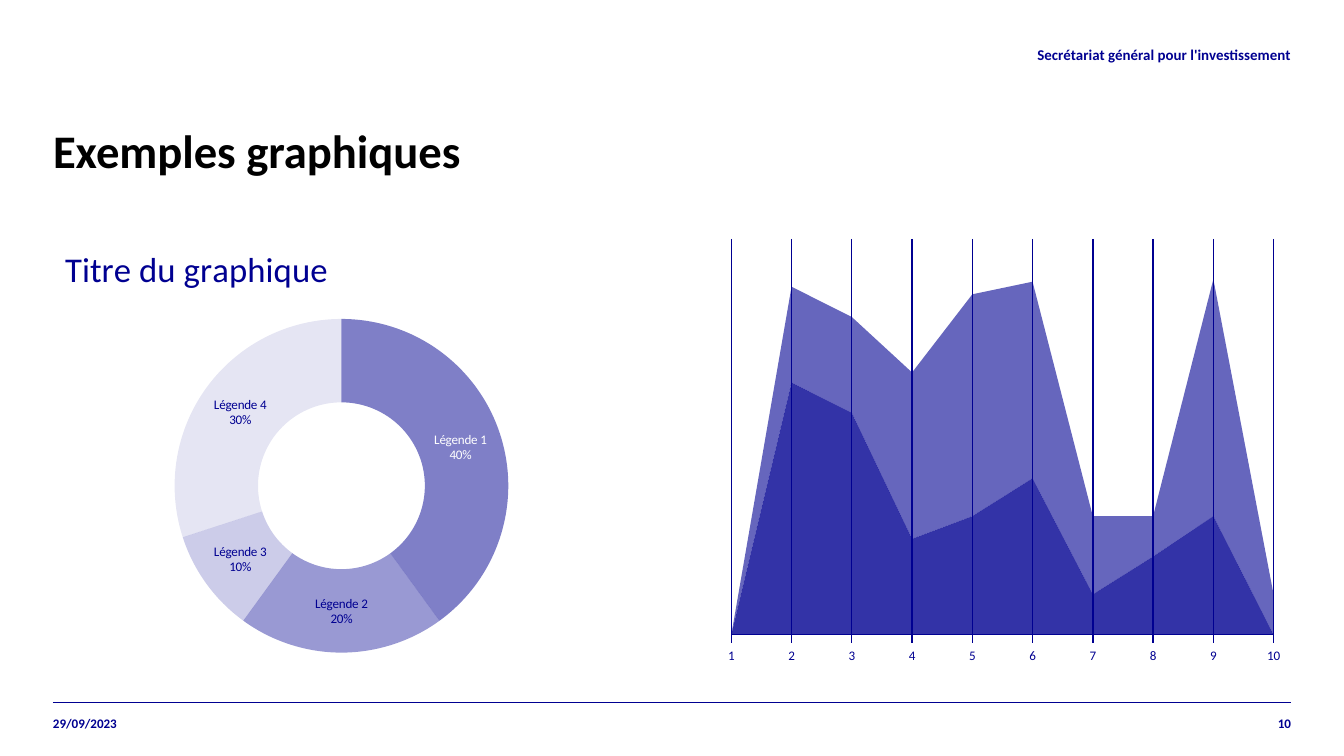
from dataclasses import dataclass

from lxml import etree
from pptx import Presentation
from pptx.chart.data import CategoryChartData
from pptx.dml.color import RGBColor
from pptx.enum.chart import XL_CHART_TYPE, XL_TICK_MARK
from pptx.enum.shapes import MSO_CONNECTOR
from pptx.enum.text import MSO_ANCHOR, PP_ALIGN
from pptx.oxml.ns import qn
from pptx.util import Pt

PX = 914400 / 134.4


@dataclass(frozen=True)
class Theme:
    font: str = "Calibri"
    blue: RGBColor = RGBColor(0x00, 0x00, 0x91)
    black: RGBColor = RGBColor(0, 0, 0)
    white: RGBColor = RGBColor(255, 255, 255)
    title: float = 25
    chart_title: float = 18.6
    header: float = 8
    small: float = 7
    rule: float = 0.5
    axis: float = 0.75


THEME = Theme()


def emu(*lengths):
    return [round(length * PX) for length in lengths]


def style_font(font, size, color, bold=False):
    for name, value in dict(name=THEME.font, size=Pt(size), bold=bold).items():
        setattr(font, name, value)
    font.color.rgb = color


def clear_margins(frame, anchor):
    settings = dict(margin_left=0, margin_right=0, margin_top=0, margin_bottom=0,
                    word_wrap=True, vertical_anchor=anchor)
    for name, value in settings.items():
        setattr(frame, name, value)


def fill_blue(area_format, opacity):
    """Fill with the theme blue at the given opacity in percent, without outline."""
    area_format.fill.solid()
    area_format.fill.fore_color.rgb = THEME.blue
    color = area_format.fill._xPr.find(".//" + qn("a:srgbClr"))
    etree.SubElement(color, qn("a:alpha"), val=str(opacity * 1000))
    area_format.line.fill.background()


def set_layout(parent, position, **fractions):
    """Place a chart part by fractions of the chart box."""
    for existing in parent.findall(qn("c:layout")):
        parent.remove(existing)
    layout = etree.Element(qn("c:layout"))
    manual = etree.SubElement(layout, qn("c:manualLayout"))
    if "w" in fractions:
        etree.SubElement(manual, qn("c:layoutTarget"), val="inner")
    for side in "xy":
        etree.SubElement(manual, qn(f"c:{side}Mode"), val="edge")
    for name, value in fractions.items():
        etree.SubElement(manual, qn(f"c:{name}"), val=str(value))
    parent.insert(position, layout)


def show_name_and_percent(labels):
    """Show category name above percentage in a label or label group element."""
    for flag, shown in dict(showVal=0, showCatName=1, showPercent=1).items():
        labels.find(qn(f"c:{flag}")).set("val", str(shown))
    separator = etree.Element(qn("c:separator"))
    separator.text = "\n"
    labels.find(qn("c:showBubbleSize")).addnext(separator)


def add_chart(slide, box, kind, categories, series):
    data = CategoryChartData()
    data.categories = categories
    for name, values in series.items():
        data.add_series(name, values)
    chart = slide.shapes.add_chart(kind, *emu(*box), data).chart
    chart.has_legend = False
    style_font(chart.font, THEME.small, THEME.blue)
    return chart


def add_doughnut(slide, box):
    chart = add_chart(slide, box, XL_CHART_TYPE.DOUGHNUT,
                      [f"Légende {n}" for n in range(1, 5)],
                      {"Series 1": (40, 20, 10, 30)})
    chart.has_title = True
    heading = chart.chart_title.text_frame.paragraphs[0].add_run()
    heading.text = "Titre du graphique"
    style_font(heading.font, THEME.chart_title, THEME.blue)
    set_layout(chart.element.find(".//" + qn("c:title")), 1, x=0.01, y=0.02)
    set_layout(chart.element.find(".//" + qn("c:plotArea")), 0,
               x=0.21, y=0.2, w=0.58, h=0.75)

    plot = chart.plots[0]
    plot.vary_by_categories = True
    ring = plot.series[0]
    for index, opacity in enumerate((50, 40, 20, 10)):
        fill_blue(ring.points[index].format, opacity)
    labels = ring.data_labels
    labels.number_format = "0%"
    labels.number_format_is_linked = False
    style_font(labels.font, THEME.small, THEME.blue)
    show_name_and_percent(labels._element)
    style_font(ring.points[0].data_label.font, THEME.small, THEME.white)
    show_name_and_percent(labels._element.find(qn("c:dLbl")))


def add_area(slide, box):
    chart = add_chart(slide, box, XL_CHART_TYPE.AREA_STACKED,
                      [str(n) for n in range(1, 11)],
                      {"Series 1": (0, 100, 88, 38, 47, 62, 16, 31, 47, 0),
                       "Series 2": (0, 38, 38, 66, 88, 78, 31, 16, 94, 16)})
    chart.has_title = False
    set_layout(chart.element.find(".//" + qn("c:plotArea")), 0,
               x=0.03, y=0.02, w=0.94, h=0.89)
    chart.plots[0].vary_by_categories = False
    for layer, opacity in zip(chart.plots[0].series, (80, 60)):
        fill_blue(layer.format, opacity)

    steps, values = chart.category_axis, chart.value_axis
    steps.has_major_gridlines = True
    steps.major_tick_mark = XL_TICK_MARK.OUTSIDE
    style_font(steps.tick_labels.font, THEME.small, THEME.blue)
    for line in (steps.format.line, steps.major_gridlines.format.line):
        line.color.rgb = THEME.blue
        line.width = Pt(THEME.axis)
    settings = dict(minimum_scale=0, maximum_scale=157,
                    has_major_gridlines=False, visible=False)
    for name, value in settings.items():
        setattr(values, name, value)
    chart.element.find(".//" + qn("c:crossBetween")).set("val", "midCat")


def add_title(slide, box):
    title = slide.shapes.title
    title.left, title.top, title.width, title.height = emu(*box)
    title.text = "Exemples graphiques"
    clear_margins(title.text_frame, MSO_ANCHOR.TOP)
    paragraph = title.text_frame.paragraphs[0]
    paragraph.alignment = PP_ALIGN.LEFT
    paragraph.line_spacing = 0.9
    style_font(paragraph.runs[0].font, THEME.title, THEME.black, bold=True)


def add_note(slide, box, text, size, alignment):
    frame = slide.shapes.add_textbox(*emu(*box)).text_frame
    clear_margins(frame, MSO_ANCHOR.MIDDLE)
    paragraph = frame.paragraphs[0]
    paragraph.alignment = alignment
    run = paragraph.add_run()
    run.text = text
    style_font(run.font, size, THEME.blue, bold=True)


def add_footer(slide, box):
    left, top, width, height = box
    rule = slide.shapes.add_connector(MSO_CONNECTOR.STRAIGHT,
                                      *emu(left, top, left + width, top))
    rule.line.color.rgb = THEME.blue
    rule.line.width = Pt(THEME.rule)
    etree.SubElement(rule._element.spPr, qn("a:effectLst"))
    add_note(slide, (left, top, 180, height), "29/09/2023", THEME.small, PP_ALIGN.LEFT)
    add_note(slide, (left + width - 69, top, 69, height), "10", THEME.small, PP_ALIGN.RIGHT)


def main():
    presentation = Presentation()
    presentation.slide_width, presentation.slide_height = emu(1344, 756)
    slide = presentation.slides.add_slide(presentation.slide_layouts[5])
    left, width = 53, 1238
    chart_width = 577
    add_title(slide, (left, 128, width, 79))
    add_note(slide, (left + 180, 28, width - 180, 53),
             "Secrétariat général pour l'investissement", THEME.header, PP_ALIGN.RIGHT)
    add_footer(slide, (left, 703, width, 40))
    add_doughnut(slide, (left, 230, chart_width, 445))
    add_area(slide, (left + width - chart_width, 230, chart_width, 445))
    presentation.save("out.pptx")


if __name__ == "__main__":
    main()
